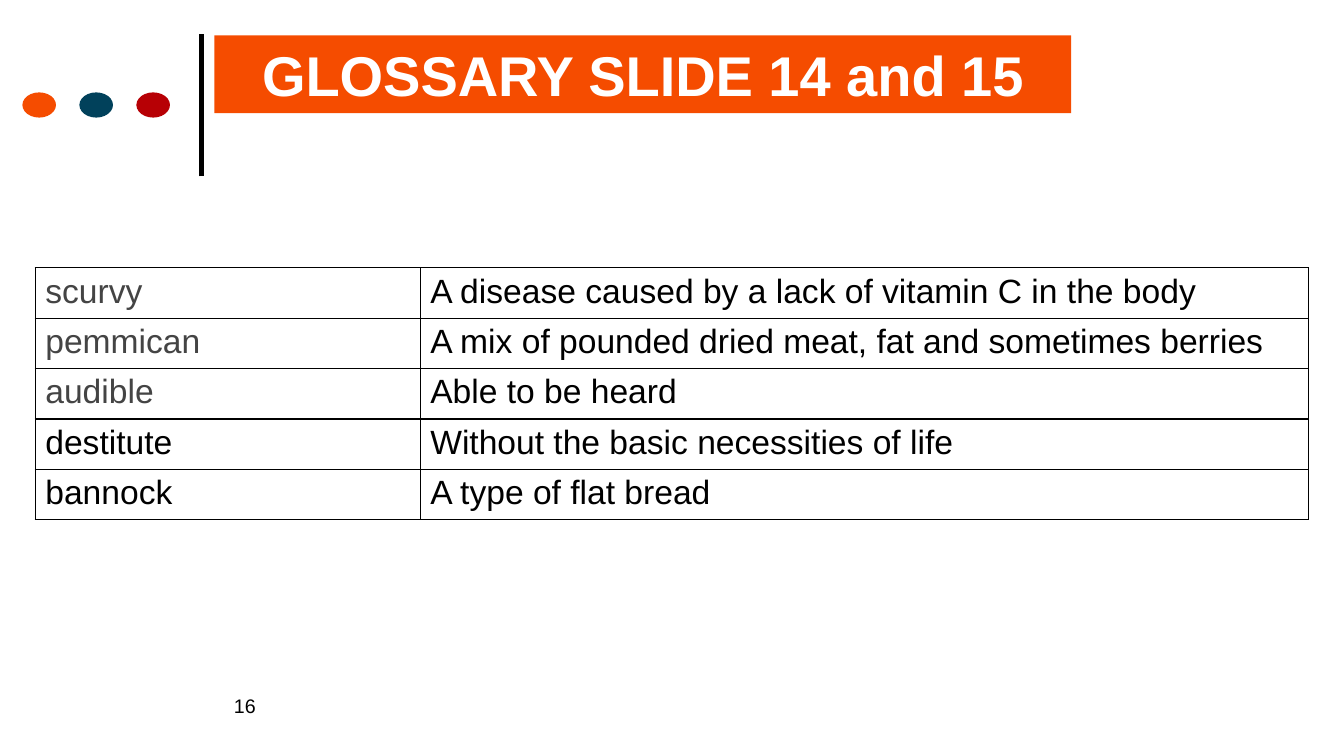
from pptx import Presentation
from pptx.dml.color import RGBColor
from pptx.enum.shapes import MSO_CONNECTOR as Connector, MSO_SHAPE as Shape
from pptx.enum.text import PP_ALIGN as Align
from pptx.oxml.ns import qn
from pptx.util import Pt
from lxml.etree import SubElement

ORANGE = RGBColor(0xF5, 0x4C, 0x00)
TEAL = RGBColor(0x01, 0x41, 0x5B)
RED = RGBColor(0xB7, 0x00, 0x05)
GREY = RGBColor(0x44, 0x44, 0x44)
BLACK = RGBColor(0, 0, 0)
WHITE = RGBColor(0xFF, 0xFF, 0xFF)

GLOSSARY = [
    ("scurvy", "A disease caused by a lack of vitamin C in the body", GREY),
    ("pemmican", "A mix of pounded dried meat, fat and sometimes berries", GREY),
    ("audible", "Able to be heard", GREY),
    ("destitute", "Without the basic necessities of life", BLACK),
    ("bannock", "A type of flat bread", BLACK),
]


class SlideBuilder:
    font_name = "Arial"

    def __init__(self, slide):
        self.slide = slide

    def add_text(self, frame, text, size, color, bold=False, align=Align.LEFT):
        frame.word_wrap = True
        paragraph = frame.paragraphs[0]
        paragraph.alignment = align
        run = paragraph.add_run()
        run.text = text
        run.font.name = self.font_name
        run.font.size = Pt(size)
        run.font.bold = bold
        run.font.color.rgb = color

    def shape(self, kind, left, top, width, height, color):
        shape = self.slide.shapes.add_shape(
            kind, Pt(left), Pt(top), Pt(width), Pt(height))
        shape.shadow.inherit = False
        shape.fill.solid()
        shape.fill.fore_color.rgb = color
        shape.line.fill.background()
        return shape

    def line(self, x1, y1, x2, y2, color, width):
        connector = self.slide.shapes.add_connector(
            Connector.STRAIGHT, Pt(x1), Pt(y1), Pt(x2), Pt(y2))
        connector.line.color.rgb = color
        connector.line.width = Pt(width)
        SubElement(connector._element.spPr, qn("a:effectLst"))

    def text_box(self, left, top, width, height, text, size, color):
        box = self.slide.shapes.add_textbox(
            Pt(left), Pt(top), Pt(width), Pt(height))
        self.add_text(box.text_frame, text, size, color)

    def border(self, cell, color, width):
        properties = cell._tc.get_or_add_tcPr()
        for position, side in enumerate(("lnL", "lnR", "lnT", "lnB")):
            edge = SubElement(properties, qn(f"a:{side}"), w=str(Pt(width)))
            fill = SubElement(edge, qn("a:solidFill"))
            SubElement(fill, qn("a:srgbClr"), val=str(color))
            properties.insert(position, edge)

    def table(self, left, top, widths, row_height, rows, size):
        table = self.slide.shapes.add_table(
            len(rows), len(widths), Pt(left), Pt(top),
            Pt(sum(widths)), Pt(row_height * len(rows))).table
        table.first_row = table.horz_banding = False
        for column, width in zip(table.columns, widths):
            column.width = Pt(width)
        for row, (term, meaning, term_color) in zip(table.rows, rows):
            row.height = Pt(row_height)
            contents = ((term, term_color), (meaning, BLACK))
            for cell, (text, color) in zip(row.cells, contents):
                cell.fill.background()
                self.border(cell, BLACK, 1)
                self.add_text(cell.text_frame, text, size, color)


def main():
    presentation = Presentation()
    presentation.slide_width = Pt(960)
    presentation.slide_height = Pt(540)
    slide = presentation.slides.add_slide(presentation.slide_layouts[6])
    builder = SlideBuilder(slide)

    builder.line(144, 126, 144, 24, BLACK, 3)
    for index, color in enumerate((ORANGE, TEAL, RED)):
        builder.shape(Shape.OVAL, 16 + 40.7 * index, 66, 24, 18, color)
    builder.text_box(160, 492, 136, 36, "16", 14, BLACK)
    builder.table(25.2, 191.2, (275, 634.3), 36, GLOSSARY, 24)
    banner = builder.shape(Shape.RECTANGLE, 153.2, 25.2, 612, 55.6, ORANGE)
    builder.add_text(banner.text_frame, "GLOSSARY SLIDE 14 and 15", 40, WHITE,
                     bold=True, align=Align.CENTER)

    presentation.save("out.pptx")


if __name__ == "__main__":
    main()
